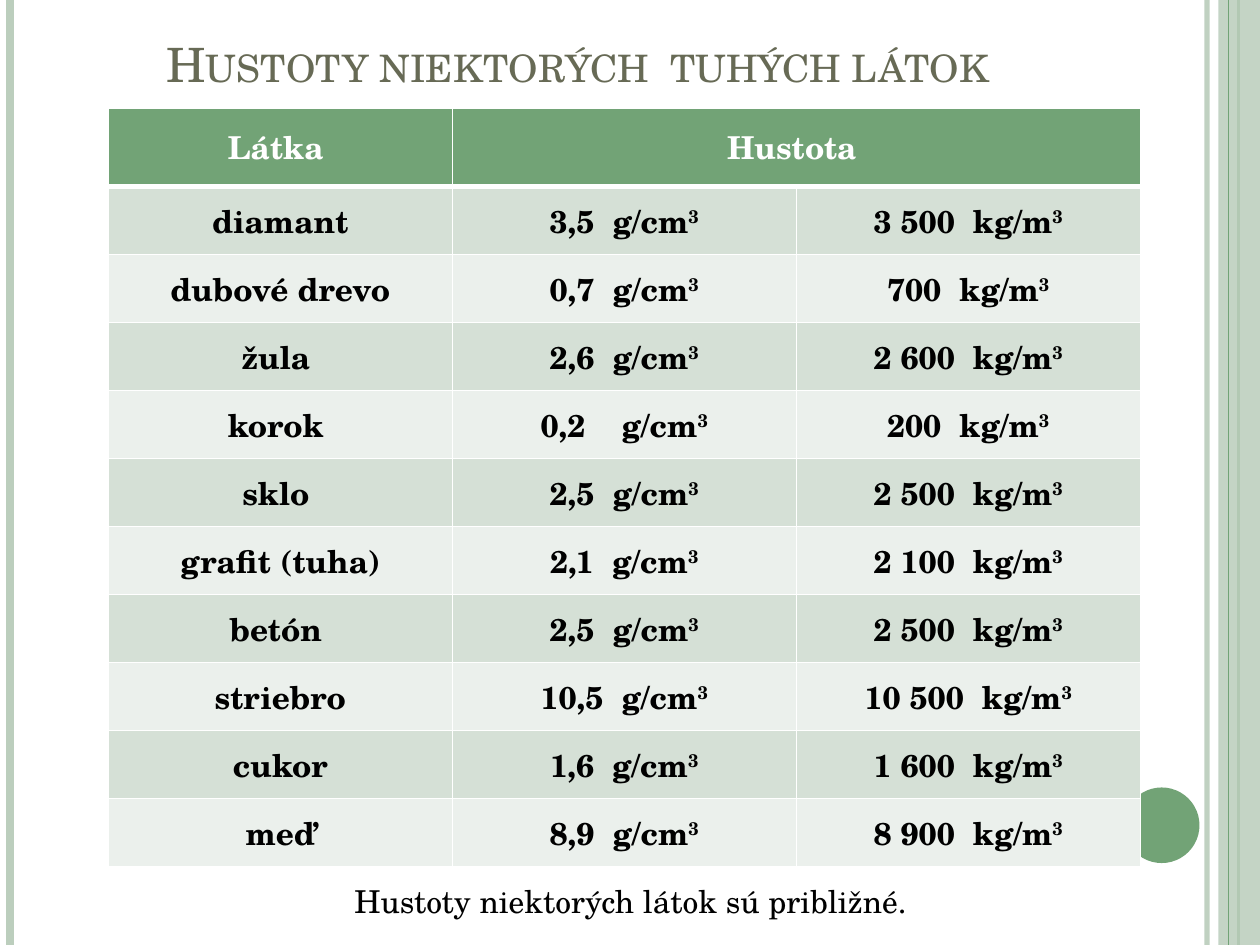
"""Build a slide with a table of the densities of some solids."""
from lxml import etree
from pptx import Presentation
from pptx.dml.color import RGBColor
from pptx.enum.shapes import MSO_CONNECTOR, MSO_SHAPE
from pptx.enum.text import MSO_ANCHOR, MSO_AUTO_SIZE, PP_ALIGN
from pptx.oxml.ns import qn
from pptx.util import Inches, Pt

LINE = MSO_CONNECTOR.STRAIGHT
RECT, OVAL = MSO_SHAPE.RECTANGLE, MSO_SHAPE.OVAL
MIDDLE, BOTTOM = MSO_ANCHOR.MIDDLE, MSO_ANCHOR.BOTTOM
CENTER, FIXED = PP_ALIGN.CENTER, MSO_AUTO_SIZE.NONE

FONT = "TeX Gyre Schola"
COLORS = {
    "green": "72A376", "pale": "BCCEBD", "title": "676A55",
    "odd": "D5E0D6", "even": "EBF0EC", "white": "FFFFFF", "black": "000000",
}
TITLE = "Hustoty niektorých  tuhých látok"
NOTE = "Hustoty niektorých látok sú približné."
HEADS = ["Látka ", "Hustota "]
UNITS = ["g/cm", "kg/m"]
SOLIDS = [
    ("diamant", "3,5", "3 500"),
    ("dubové drevo", "0,7", "700"),
    ("žula ", "2,6", "2 600"),
    ("korok ", "0,2  ", "200"),
    ("sklo ", "2,5", "2 500"),
    ("grafit (tuha)", "2,1", "2 100"),
    ("betón ", "2,5", "2 500"),
    ("striebro", "10,5", "10 500"),
    ("cukor", "1,6", "1 600"),
    ("meď", "8,9", "8 900"),
]
RULES = [
    (9.58, "pale", 3, 93), (0.08, "pale", 4.5, 100), (9.83, "green", 1.5, 100),
]
EDGE = (9.75, "green", 0.75, 100)
BAND = (RECT, (9.67, 0, 0.33, 7.5), "pale", 87)
DOT = (OVAL, (8.92, 6.25, 0.6, 0.6), "green", 100)


def rgb(name):
    return RGBColor.from_string(COLORS[name])


def fade(shape, alpha):
    if alpha < 100:
        tone = next(shape._element.spPr.iter(qn("a:srgbClr")))
        etree.SubElement(tone, qn("a:alpha"), val=str(alpha * 1000))


def add_rule(slide, x, color, width, alpha):
    rule = slide.shapes.add_connector(LINE, Inches(x), 0, Inches(x), Inches(7.5))
    rule.line.color.rgb = rgb(color)
    rule.line.width = Pt(width)
    etree.SubElement(rule._element.spPr, qn("a:effectLst"))
    fade(rule, alpha)


def add_block(slide, kind, box, color, alpha):
    block = slide.shapes.add_shape(kind, *map(Inches, box))
    block.shadow.inherit = False
    block.fill.solid()
    block.fill.fore_color.rgb = rgb(color)
    block.line.fill.background()
    fade(block, alpha)


def write(frame, text, size, color, bold=False, power=None):
    para = frame.paragraphs[0]
    para.alignment = CENTER
    font = para.font
    font.name, font.size, font.bold = FONT, Pt(size), bold
    font.color.rgb = rgb(color)
    run = para.add_run()
    run.text = text
    if power:
        high = para.add_run()
        high.text = power
        high._r.get_or_add_rPr().set("baseline", "30000")
    return run


def edge(cell, top, bottom):
    props = cell._tc.get_or_add_tcPr()
    for side, width in zip("LRTB", (1, 1, top, bottom)):
        line = etree.SubElement(props, qn(f"a:ln{side}"), w=str(Pt(width)))
        fill = etree.SubElement(line, qn("a:solidFill"))
        etree.SubElement(fill, qn("a:srgbClr"), val=COLORS["white"])


def style(cell, color, top=1, bottom=1):
    edge(cell, top, bottom)
    cell.fill.solid()
    cell.fill.fore_color.rgb = rgb(color)
    cell.vertical_anchor = MIDDLE


def add_grid(slide):
    box = map(Inches, (0.86, 0.86, 8.2, 6.02))
    grid = slide.shapes.add_table(len(SOLIDS) + 1, 3, *box).table
    for col in grid.columns:
        col.width = Inches(2.73)
    for i, row in enumerate(grid.rows):
        row.height = Inches(0.54 if i else 0.62)
    for j in range(3):
        style(grid.cell(0, j), "green", bottom=3)
    grid.cell(0, 1).merge(grid.cell(0, 2))
    for j, head in enumerate(HEADS):
        write(grid.cell(0, j).text_frame, head, 18, "white", True)
    for i, (name, *values) in enumerate(SOLIDS, 1):
        texts = [(name, None)]
        texts += [(f"{v}  {unit}", "3") for v, unit in zip(values, UNITS)]
        for j, (text, power) in enumerate(texts):
            cell = grid.cell(i, j)
            style(cell, "odd" if i % 2 else "even", top=3 if i == 1 else 1)
            write(cell.text_frame, text, 18, "black", True, power)


def add_title(slide):
    title = slide.shapes.title
    title.left, title.top = Inches(0.5), Inches(0.3)
    title.width, title.height = Inches(8.17), Inches(0.48)
    frame = title.text_frame
    frame.auto_size, frame.vertical_anchor = FIXED, BOTTOM
    run = write(frame, TITLE, 27, "title")
    run._r.get_or_add_rPr().set("cap", "small")


def add_note(slide):
    box = map(Inches, (0.94, 6.95, 8.13, 0.4))
    frame = slide.shapes.add_textbox(*box).text_frame
    frame.word_wrap = True
    write(frame, NOTE, 18, "black")


def main():
    deck = Presentation()
    deck.slide_width, deck.slide_height = Inches(10), Inches(7.5)
    slide = deck.slides.add_slide(deck.slide_layouts[5])
    for rule in RULES:
        add_rule(slide, *rule)
    add_block(slide, *BAND)
    add_rule(slide, *EDGE)
    add_block(slide, *DOT)
    add_title(slide)
    add_grid(slide)
    add_note(slide)
    deck.save("out.pptx")


if __name__ == "__main__":
    main()
